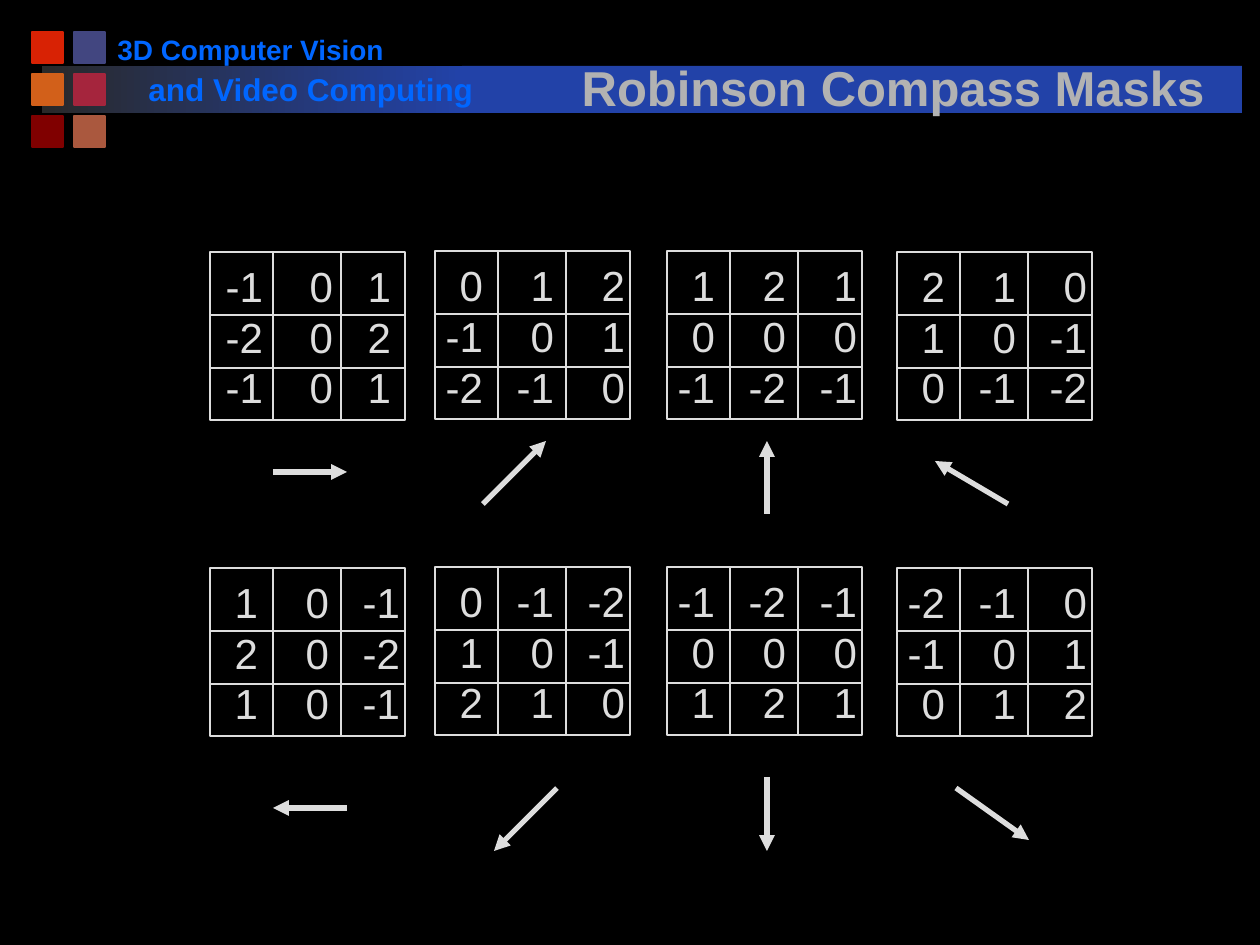
from lxml.etree import SubElement
from pptx import Presentation
from pptx.dml.color import RGBColor
from pptx.enum.shapes import MSO_CONNECTOR, MSO_SHAPE
from pptx.enum.text import MSO_ANCHOR, MSO_AUTO_SIZE, PP_ALIGN
from pptx.oxml.ns import qn
from pptx.util import Pt

# Content: each mask has its rows and its arrow (from x, y, to x, y)
TITLE = "Robinson Compass Masks"
BRAND = [("3D Computer Vision", 16, (105, 26, 292, 47)),
         ("and Video Computing", 18, (136, 64, 357, 50))]
MASKS = [
    [(("-1 0 1", "-2 0 2", "-1 0 1"), (273, 472, 347, 472)),
     (("0 1 2", "-1 0 1", "-2 -1 0"), (483, 504, 546, 441)),
     (("1 2 1", "0 0 0", "-1 -2 -1"), (767, 514, 767, 441)),
     (("2 1 0", "1 0 -1", "0 -1 -2"), (1008, 504, 935, 461))],
    [(("1 0 -1", "2 0 -2", "1 0 -1"), (347, 808, 273, 808)),
     (("0 -1 -2", "1 0 -1", "2 1 0"), (557, 788, 494, 851)),
     (("-1 -2 -1", "0 0 0", "1 2 1"), (767, 777, 767, 851)),
     (("-2 -1 0", "-1 0 1", "0 1 2"), (956, 788, 1029, 840))],
]
SQUARES = [("D82204", "424680"), ("D2601A", "A5253D"), ("800000", "AA583E")]

# Layout in px
LEFTS, TOPS, LIFTS = (210, 435, 667, 897), (252, 568), (0, 1, 1, 0)
COLS, ROWS, WIDE, HIGH = (63, 131), (63, 116), 195, 168
TABS, NEAR = (48, 119, 190), (53, 123, 181)
INK, BLUE = "DDDDDD", "2242A8"


def px(n):
    return round(n * 914400 / 126)


def color(code):
    return RGBColor.from_string(code)


def style(font, code, **form):
    font.color.rgb = color(code)
    for key, val in {"name": "Arial", **form}.items():
        setattr(font, key, val)


def block(box, fill=None, edge=None, width=1):
    shape = slide.shapes.add_shape(MSO_SHAPE.RECTANGLE, *map(px, box))
    shape.shadow.inherit = False
    if fill:
        shape.fill.solid()
        shape.fill.fore_color.rgb = color(fill)
    else:
        shape.fill.background()
    if edge:
        shape.line.color.rgb = color(edge)
        shape.line.width = Pt(width)
    else:
        shape.line.fill.background()
    return shape


def line(ends, width=0.75, arrow=False):
    link = slide.shapes.add_connector(MSO_CONNECTOR.STRAIGHT, *map(px, ends))
    link.line.color.rgb = color(INK)
    link.line.width = Pt(width)
    if arrow:
        SubElement(link.line._get_or_add_ln(), qn("a:tailEnd"), type="triangle")
    SubElement(link._element.spPr, qn("a:effectLst"))


def label(box, text):
    frame = slide.shapes.add_textbox(*map(px, box)).text_frame
    frame.word_wrap = True
    frame.text = text
    return frame


def mask(x, y, rows, tabs):
    # Numbers line up on right-hand tab stops
    frame = label((x, y + 2, WIDE, HIGH - 4),
                  "\n".join("\t" + "\t".join(row.split()) for row in rows))
    frame.margin_left = frame.margin_right = 0
    for para in frame.paragraphs:
        para.line_spacing = Pt(29)
        style(para.runs[0].font, INK, size=Pt(24))
        stops = SubElement(para._p.get_or_add_pPr(), qn("a:tabLst"))
        for tab in tabs:
            SubElement(stops, qn("a:tab"), pos=str(px(tab)), algn="r")
    # Frame and inner rules
    block((x, y, WIDE, HIGH), edge=INK, width=0.75)
    for dy in ROWS:
        line((x, y + dy, x + WIDE, y + dy))
    for dx in COLS:
        line((x + dx, y, x + dx, y + HIGH))


deck = Presentation()
deck.slide_width, deck.slide_height = px(1260), px(945)
slide = deck.slides.add_slide(deck.slide_layouts[5])
slide.background.fill.solid()
slide.background.fill.fore_color.rgb = color("000000")

# Header bar, fading in from the left
fade = block((42, 66, 420, 47), BLUE).fill
fade.gradient()
fade.gradient_angle = 0
for stop, code, spot in zip(fade.gradient_stops, ("292929", BLUE), (0, 1)):
    stop.color.rgb = color(code)
    stop.position = spot
block((462, 66, 780, 47), BLUE)

# Coloured squares
for r, pair in enumerate(SQUARES):
    for c, code in enumerate(pair):
        block((32 + 42 * c, 32 + 42 * r, 31, 31), code, code)

# Course name
for text, size, box in BRAND:
    run = label(box, text).paragraphs[0].runs[0]
    style(run.font, "0066FF", size=Pt(size), bold=True)

# Title, brought in front of the bar, with a text shadow
head = slide.shapes.title
slide.shapes._spTree.append(head._element)
head.left, head.top, head.width, head.height = map(px, (534, 39, 718, 84))
frame = head.text_frame
frame.text = TITLE
for key, val in {"vertical_anchor": MSO_ANCHOR.BOTTOM, "word_wrap": True,
                 "auto_size": MSO_AUTO_SIZE.NONE}.items():
    setattr(frame, key, val)
para = frame.paragraphs[0]
para.alignment = PP_ALIGN.CENTER
font = para.runs[0].font
style(font, "B2B2B2", size=Pt(28), bold=True)
glow = SubElement(para.runs[0]._r.rPr, qn("a:effectLst"))
font._rPr.find(qn("a:solidFill")).addnext(glow)
shade = SubElement(glow, qn("a:outerShdw"), dist=str(px(4)), dir="2700000")
SubElement(shade, qn("a:srgbClr"), val="000000")

# Masks and their arrows; a last column without minus signs sits nearer
for top, band in zip(TOPS, MASKS):
    for x, lift, (rows, ends) in zip(LEFTS, LIFTS, band):
        tight = all(row.startswith("-") for row in rows)
        mask(x, top - lift, rows, NEAR if tight else TABS)
        line(ends, 3, True)

deck.save("out.pptx")
